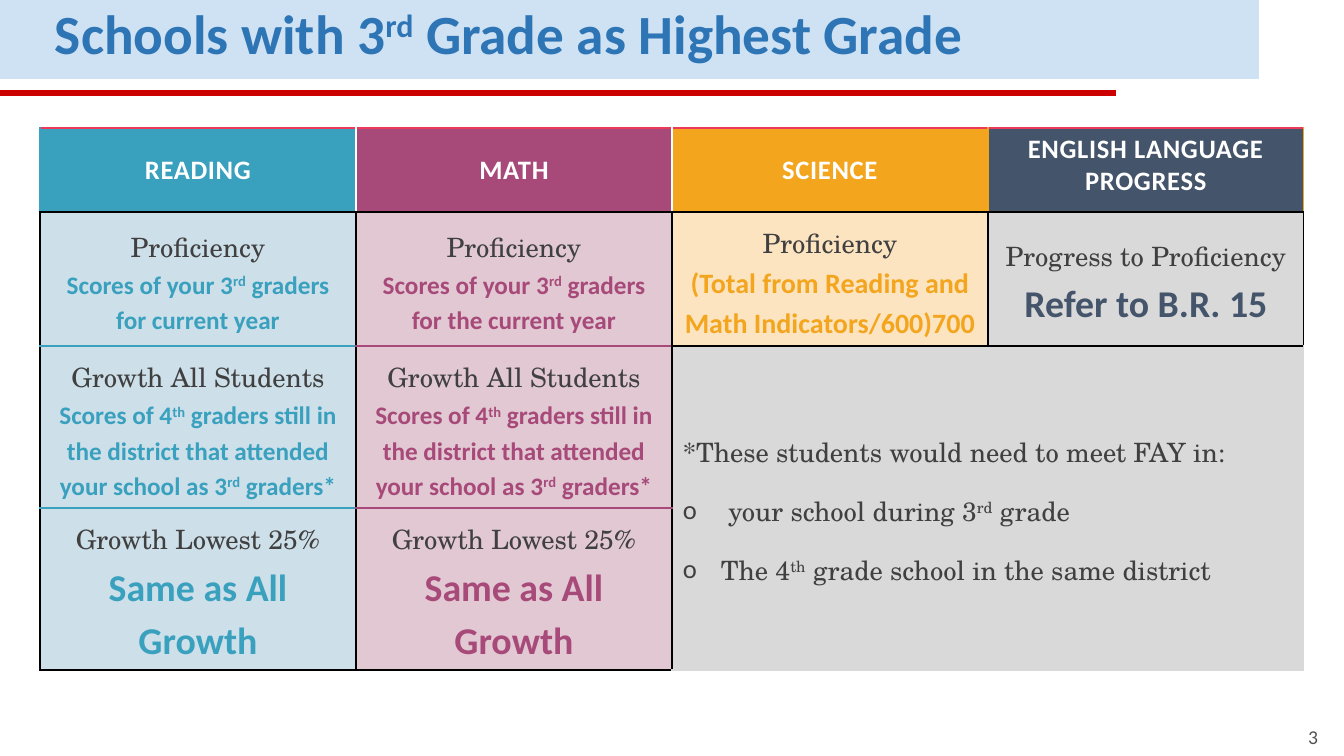
import pptx
import pptx.dml.color
import pptx.enum.shapes
import pptx.enum.text
import pptx.oxml.ns
import pptx.util
from dataclasses import dataclass
from lxml import etree

PX = 914400 / 100.8
ALIGN = pptx.enum.text.PP_ALIGN
ANCHOR = pptx.enum.text.MSO_ANCHOR


@dataclass(frozen=True)
class Theme:
    sans: str = "Calibri"
    serif: str = "TeX Gyre Schola"
    band: str = "CFE2F3"
    rule: str = "CC0000"
    title: str = "2E75B6"
    number: str = "525252"
    white: str = "FFFFFF"
    black: str = "000000"
    body: str = "404040"
    top_line: str = "EE3A5A"
    reading: str = "39A0BE"
    reading_tint: str = "CDDFE9"
    math: str = "A74A7A"
    math_tint: str = "E1C8D2"
    science: str = "F3A51D"
    science_tint: str = "FCE4C1"
    english: str = "44546A"
    gray: str = "D9D9D9"
    title_size: float = 39.5
    big_size: int = 27
    total_size: int = 20
    label_size: int = 19
    detail_size: int = 18
    number_size: int = 14


T = Theme()
LABEL = (T.serif, T.label_size, T.body, False)


def emu(*lengths):
    return [pptx.util.Emu(round(n * PX)) for n in lengths]


def rgb(color):
    return pptx.dml.color.RGBColor.from_string(color)


def sub(parent, tag, **attrs):
    return etree.SubElement(parent, pptx.oxml.ns.qn(tag), attrs)


def set_font(font, style):
    font.name, size, color, font.bold = style
    font.size = pptx.util.Pt(size)
    font.color.rgb = rgb(color)


def write(p, lines, align=ALIGN.LEFT, spacing=1.15, after=0, tracking=None):
    """Write (text, style) lines; text between carets is superscript."""
    p.alignment = align
    p.line_spacing = spacing
    p.space_after = pptx.util.Pt(after)
    shared = len(lines) == 1
    if shared:
        set_font(p.font, lines[0][1])
    for i, (text, style) in enumerate(lines):
        if i:
            p.add_line_break()
        for j, part in enumerate(text.split("^")):
            r = p.add_run()
            r.text = part
            if not shared:
                set_font(r.font, style)
            if j % 2:
                r.font._element.set("baseline", "30000")
            if tracking:
                r.font._element.set("spc", str(tracking))


def add_bullet(p):
    pPr = p._p.get_or_add_pPr()
    indent = emu(38)[0]
    pPr.set("marL", str(indent))
    pPr.set("indent", str(-indent))
    sub(pPr, "a:buFont", typeface=T.sans)
    sub(pPr, "a:buChar", char="o")


def style_cell(cell, fill, left=T.black, right=T.black, top=T.black, bottom=T.black,
               anchor=ANCHOR.MIDDLE):
    cell.vertical_anchor = anchor
    cell.margin_left, cell.margin_right, cell.margin_top, cell.margin_bottom = emu(11, 11, 5, 5)
    tcPr = cell._tc.get_or_add_tcPr()
    for side, color in zip("LRTB", (left, right, top, bottom)):
        width = pptx.util.Pt(2.25 if color == T.white else 1)
        ln = sub(tcPr, f"a:ln{side}", w=str(width))
        sub(sub(ln, "a:solidFill"), "a:srgbClr", val=color)
    cell.fill.solid()
    cell.fill.fore_color.rgb = rgb(fill)


def add_bar(slide, box, color):
    sp = slide.shapes.add_shape(pptx.enum.shapes.MSO_SHAPE.RECTANGLE, *emu(*box))
    sp.shadow.inherit = False
    sp.fill.solid()
    sp.fill.fore_color.rgb = rgb(color)
    sp.line.fill.background()


def add_text(slide, box, text, style, anchor, **layout):
    tf = slide.shapes.add_textbox(*emu(*box)).text_frame
    tf.word_wrap = True
    tf.vertical_anchor = anchor
    write(tf.paragraphs[0], [(text, style)], **layout)


def add_heading(slide, x, y, w, h):
    add_bar(slide, (x, y, w, h), T.band)
    add_bar(slide, (x, y + h + 11, 1116, 6), T.rule)
    add_text(slide, (x + 45, y + 5, w - 45, h - 12), "Schools with 3^rd^ Grade as Highest Grade",
             (T.sans, T.title_size, T.title, True), ANCHOR.MIDDLE, spacing=0.8)


def fill_header(table):
    header = (T.sans, T.label_size, T.white, True)
    columns = [
        ("READING", T.reading, T.reading, T.white, ANCHOR.MIDDLE),
        ("MATH", T.math, T.white, T.white, ANCHOR.MIDDLE),
        ("SCIENCE", T.science, T.white, T.science, ANCHOR.MIDDLE),
        ("ENGLISH LANGUAGE PROGRESS", T.english, T.science, T.science, ANCHOR.TOP),
    ]
    for c, (name, fill, left, right, anchor) in enumerate(columns):
        cell = table.cell(0, c)
        style_cell(cell, fill, left, right, top=T.top_line, anchor=anchor)
        write(cell.text_frame.paragraphs[0], [(name, header)], ALIGN.CENTER, 1, tracking=50)


def fill_subject(table, c, color, tint, current):
    rows = [
        ("Proficiency", f"Scores of your 3^rd^ graders for {current}", T.detail_size),
        ("Growth All Students", "Scores of 4^th^ graders still in the district that attended "
         "your school as 3^rd^ graders*", T.detail_size),
        ("Growth Lowest 25%", "Same as All Growth", T.big_size),
    ]
    for r, (label, detail, size) in enumerate(rows, 1):
        cell = table.cell(r, c)
        style_cell(cell, tint, top=T.black if r == 1 else color,
                   bottom=T.black if r == len(rows) else color)
        write(cell.text_frame.paragraphs[0],
              [(label, LABEL), (detail, (T.sans, size, color, True))], ALIGN.CENTER, after=10)


def fill_science(cell):
    style_cell(cell, T.science_tint)
    total = (T.sans, T.total_size, T.science, True)
    write(cell.text_frame.paragraphs[0],
          [("Proficiency", LABEL), ("(Total from Reading and Math Indicators/600)700", total)],
          ALIGN.CENTER, after=10)


def fill_english(cell):
    style_cell(cell, T.gray)
    tf = cell.text_frame
    write(tf.paragraphs[0], [("Progress to Proficiency", LABEL)], ALIGN.CENTER)
    write(tf.add_paragraph(), [("Refer to B.R. 15", (T.sans, T.big_size, T.english, True))],
          ALIGN.CENTER)


def fill_footnote(table):
    for r in (2, 3):
        for c in (2, 3):
            style_cell(table.cell(r, c), T.gray, T.black if c == 2 else T.gray, T.gray,
                       T.black if r == 2 else T.gray, T.gray)
    note = table.cell(2, 2)
    note.merge(table.cell(3, 3))
    tf = note.text_frame
    write(tf.paragraphs[0], [("*These students would need to meet FAY in:", LABEL)], after=10)
    for text in (" your school during 3^rd^ grade", "The 4^th^ grade school in the same district"):
        p = tf.add_paragraph()
        add_bullet(p)
        write(p, [(text, LABEL)], after=10)


def add_grade_table(slide, x, y, w, row_heights):
    columns = 4
    frame = slide.shapes.add_table(len(row_heights), columns, *emu(x, y, w, sum(row_heights)))
    table = frame.table
    table.first_row = table.horz_banding = False
    for row, height in zip(table.rows, emu(*row_heights)):
        row.height = height
    fill_header(table)
    fill_subject(table, 0, T.reading, T.reading_tint, "current year")
    fill_subject(table, 1, T.math, T.math_tint, "the current year")
    fill_science(table.cell(1, 2))
    fill_english(table.cell(1, 3))
    fill_footnote(table)


def main():
    prs = pptx.Presentation()
    prs.slide_width, prs.slide_height = emu(1344, 756)
    slide = prs.slides.add_slide(prs.slide_layouts[6])
    add_heading(slide, 0, 0, 1259, 79)
    add_text(slide, (1247, 719, 81, 34), "3", (T.sans, T.number_size, T.number, False),
             ANCHOR.BOTTOM, align=ALIGN.RIGHT, spacing=1)
    add_grade_table(slide, 40, 128, 1264, [84, 134, 162, 162])
    prs.save("out.pptx")


if __name__ == "__main__":
    main()
